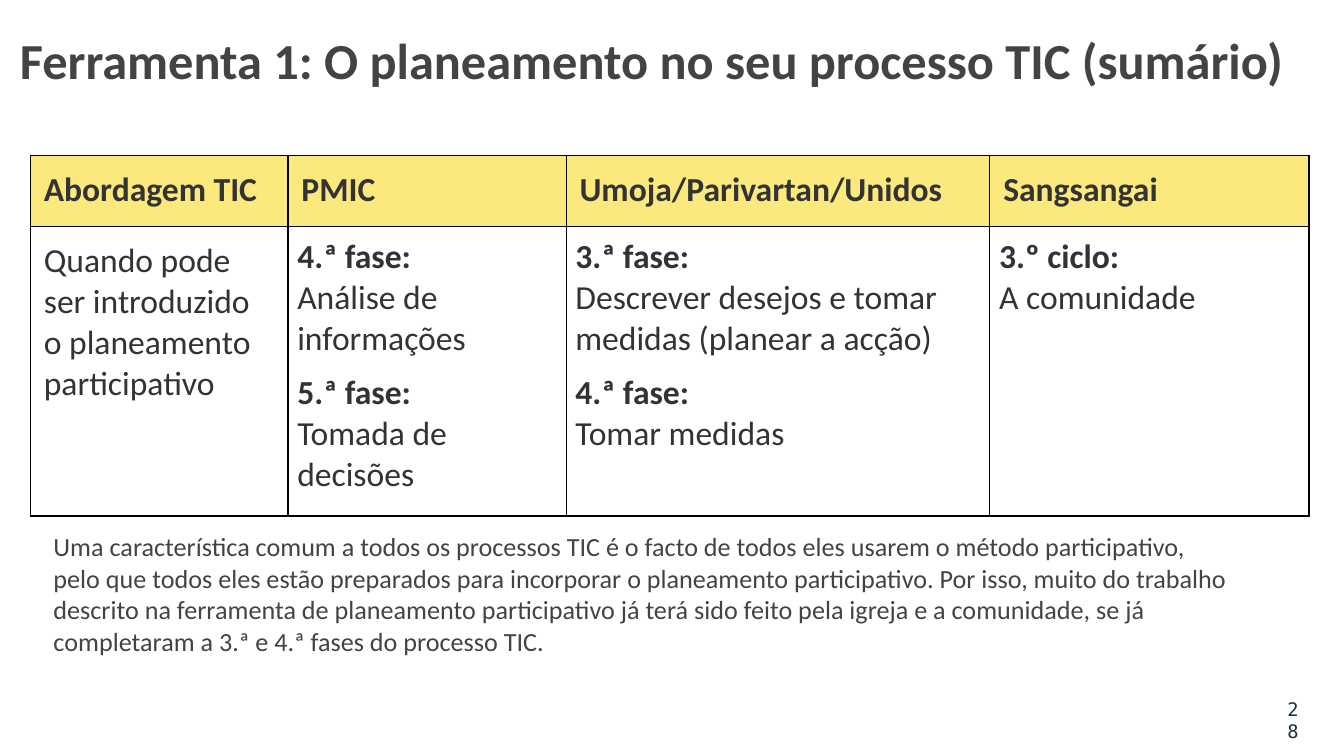
from lxml import etree
from pptx import Presentation
from pptx.dml.color import RGBColor
from pptx.enum.text import MSO_ANCHOR, PP_ALIGN
from pptx.oxml.ns import qn
from pptx.util import Pt

TOP = MSO_ANCHOR.TOP
LEFT, RIGHT = PP_ALIGN.LEFT, PP_ALIGN.RIGHT
WHITE = RGBColor(0xFF, 0xFF, 0xFF)
YELLOW = RGBColor(0xFC, 0xE9, 0x7D)
GREY = RGBColor(0x43, 0x43, 0x43)
DARK = RGBColor(0x33, 0x33, 0x33)
NAVY = RGBColor(0x17, 0x31, 0x45)

TITLE = "Ferramenta 1: O planeamento no seu processo TIC (sumário)"
HEADERS = ["Abordagem TIC", "PMIC", "Umoja/Parivartan/Unidos", "Sangsangai"]
QUESTION = "Quando pode ser introduzido o planeamento participativo"
PHASES = [
    [("4.ª fase:", "Análise de informações"), ("5.ª fase:", "Tomada de decisões")],
    [("3.ª fase:", "Descrever desejos e tomar medidas (planear a acção)"),
     ("4.ª fase:", "Tomar medidas")],
    [("3.º ciclo:", "A comunidade")],
]
SUMMARY = (
    "Uma característica comum a todos os processos TIC é o facto de todos eles "
    "usarem o método participativo, pelo que todos eles estão preparados para "
    "incorporar o planeamento participativo. Por isso, muito do trabalho descrito "
    "na ferramenta de planeamento participativo já terá sido feito pela igreja e a "
    "comunidade, se já completaram a 3.ª e 4.ª fases do processo TIC."
)


class SlideBuilder:
    """Holds the text style and the current page."""

    font_name = "Calibri"
    margin = Pt(7.2)
    phase_margin = Pt(5)
    phase_gap = Pt(7)
    border = Pt(0.75)

    def __init__(self, page):
        self.page = page

    def span(self, para, text, size, color, bold=False, name=font_name):
        run = para.add_run()
        run.text = text
        style = {"size": Pt(size), "bold": bold, "name": name}
        for key, value in style.items():
            setattr(run.font, key, value)
        run.font.color.rgb = color

    def set_margins(self, target, margin):
        for side in ("left", "top", "right", "bottom"):
            setattr(target, f"margin_{side}", margin)

    def text(self, bounds, text, size, color, align=LEFT, **style):
        box = self.page.shapes.add_textbox(*map(Pt, bounds))
        frame = box.text_frame
        frame.word_wrap = True
        frame.vertical_anchor = TOP
        self.set_margins(frame, self.margin)
        para = frame.paragraphs[0]
        para.alignment = align
        self.span(para, text, size, color, **style)

    def table(self, left, top, widths, heights):
        frame = self.page.shapes.add_table(
            len(heights), len(widths), Pt(left), Pt(top),
            Pt(sum(widths)), Pt(sum(heights)))
        grid = frame.table
        for column, width in zip(grid.columns, widths):
            column.width = Pt(width)
        for row, height in zip(grid.rows, heights):
            row.height = Pt(height)
        return grid

    def cell(self, cell, items, fill, bold=False):
        """Fill a cell with plain strings or (heading, detail) pairs."""
        cell.vertical_anchor = TOP
        paired = isinstance(items[0], tuple)
        self.set_margins(cell, self.phase_margin if paired else self.margin)
        for index, item in enumerate(items):
            if index:
                para = cell.text_frame.add_paragraph()
                para.space_before = self.phase_gap
            else:
                para = cell.text_frame.paragraphs[0]
            if paired:
                heading, detail = item
                self.span(para, heading, 18, DARK, bold=True)
                para.add_line_break()
                self.span(para, detail, 18, DARK)
            else:
                self.span(para, item, 18, DARK, bold=bold)
        self.cell_borders(cell)
        cell.fill.solid()
        cell.fill.fore_color.rgb = fill

    def cell_borders(self, cell):
        properties = cell._tc.get_or_add_tcPr()
        for edge in ("a:lnL", "a:lnR", "a:lnT", "a:lnB"):
            line = etree.SubElement(properties, qn(edge), w=str(int(self.border)))
            paint = etree.SubElement(line, qn("a:solidFill"))
            etree.SubElement(paint, qn("a:srgbClr"), val="000000")


def main():
    deck = Presentation()
    deck.slide_width, deck.slide_height = Pt(720), Pt(405)
    builder = SlideBuilder(deck.slides.add_slide(deck.slide_layouts[6]))

    # Page number and title
    builder.text((677.5, 366.5, 25.2, 21.6), "28", 10, NAVY, RIGHT,
                 name="DejaVu Sans Mono")
    builder.text((3.6, 8.6, 712, 45.4), TITLE, 27, GREY, bold=True)

    # Table of approaches and their phases
    grid = builder.table(16.3, 83.5, [138, 149, 227, 171], [38, 155])
    for column, header in enumerate(HEADERS):
        builder.cell(grid.cell(0, column), [header], YELLOW, bold=True)
    for column, items in enumerate([[QUESTION], *PHASES]):
        builder.cell(grid.cell(1, column), items, WHITE)

    # Summary below the table
    builder.text((21.6, 277.2, 645, 66), SUMMARY, 14, GREY)

    deck.save("out.pptx")


if __name__ == "__main__":
    main()
